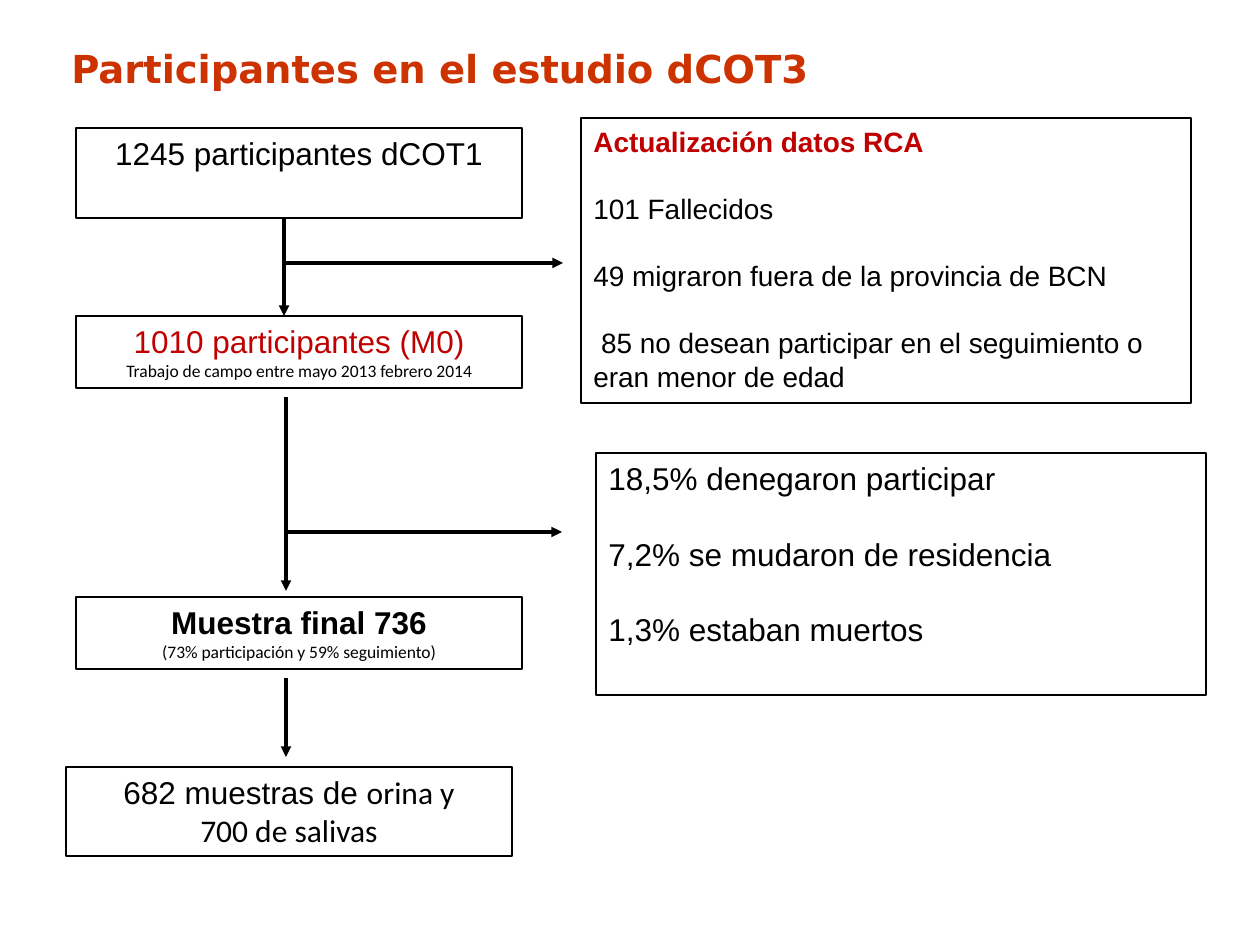
"""Build the participant flow slide of the dCOT3 study."""
from dataclasses import dataclass

from lxml.etree import SubElement
from pptx import Presentation
from pptx.dml.color import RGBColor
from pptx.enum.shapes import MSO_CONNECTOR as Connector, MSO_SHAPE as Shape
from pptx.enum.text import MSO_ANCHOR as Anchor, PP_ALIGN as Align
from pptx.oxml.ns import qn
from pptx.util import Emu, Pt


@dataclass(frozen=True)
class Style:
    font: str
    size: int
    color: str = "000000"
    bold: bool = False


@dataclass(frozen=True)
class Theme:
    title = Style("DejaVu Sans", 22, "CC3300", True)
    step = Style("Arial", 18)
    key_step = Style("Arial", 18, "C00000")
    final_step = Style("Arial", 18, bold=True)
    sample = Style("Calibri", 18)
    detail = Style("Calibri", 10)
    loss_title = Style("Arial", 16, "C00000", True)
    loss = Style("Arial", 16)
    ink = "000000"
    border = 0.75
    arrow = 2
    leading = 1.2


THEME = Theme()
PX = 914400 / 126
SLIDE = (1260, 945)

TITLE_AREA = (59, 39, 763, 59)
TITLE = [[("Participantes en el estudio dCOT3", THEME.title)]]

STEP_WIDTH = 446
STEPS = [
    (76, 128, 90, [[("1245 participantes dCOT1", THEME.step)]]),
    (76, 316, 72, [
        [("1010 participantes (M0)", THEME.key_step)],
        [("Trabajo de campo entre mayo 2013 febrero 2014", THEME.detail)],
    ]),
    (76, 597, 72, [
        [("Muestra final 736", THEME.final_step)],
        [("(73% participación y 59% seguimiento)", THEME.detail)],
    ]),
    (66, 767, 89, [
        [("682 muestras de ", THEME.step), ("orina y", THEME.sample)],
        [("700 de salivas", THEME.sample)],
    ]),
]

LOSS_WIDTH = 610
LOSSES = [
    (581, 118, 285, [
        [("Actualización datos RCA", THEME.loss_title)],
        [("101 Fallecidos", THEME.loss)],
        [("49 migraron fuera de la provincia de BCN", THEME.loss)],
        [(" 85 no desean participar en el seguimiento o eran menor de edad",
          THEME.loss)],
    ]),
    (596, 453, 242, [
        [("18,5% denegaron participar", THEME.step)],
        [("7,2% se mudaron de residencia", THEME.step)],
        [("1,3% estaban muertos", THEME.step)],
    ]),
]

ARROWS = [
    ((284, 217), (284, 316)),
    ((284, 532), (562, 532)),
    ((286, 263), (563, 263)),
    ((286, 397), (286, 591)),
    ((286, 678), (286, 757)),
]


def px(*lengths):
    return [Emu(round(length * PX)) for length in lengths]


def write(frame, paragraphs, align=Align.LEFT, spaced=False):
    frame.vertical_anchor = Anchor.TOP
    for index, spans in enumerate(paragraphs):
        para = frame.add_paragraph() if index else frame.paragraphs[0]
        para.alignment = align
        line_height = Pt(spans[0][1].size * THEME.leading)
        para.line_spacing = line_height
        if spaced and index:
            para.space_before = line_height
        for text, style in spans:
            span = para.add_run()
            span.text = text
            span.font.name = style.font
            span.font.size = Pt(style.size)
            span.font.bold = style.bold
            span.font.color.rgb = RGBColor.from_string(style.color)


def add_title(page):
    box = page.shapes.add_textbox(*px(*TITLE_AREA))
    box.text_frame.word_wrap = False
    write(box.text_frame, TITLE)


def add_box(page, area, paragraphs, align, spaced):
    box = page.shapes.add_shape(Shape.RECTANGLE, *px(*area))
    box.shadow.inherit = False
    box.fill.background()
    box.line.color.rgb = RGBColor.from_string(THEME.ink)
    box.line.width = Pt(THEME.border)
    box.text_frame.word_wrap = True
    write(box.text_frame, paragraphs, align, spaced)


def add_arrow(page, start, end):
    arrow = page.shapes.add_connector(Connector.STRAIGHT, *px(*start, *end))
    arrow.line.color.rgb = RGBColor.from_string(THEME.ink)
    arrow.line.width = Pt(THEME.arrow)
    SubElement(arrow.line._get_or_add_ln(), qn("a:tailEnd"), type="triangle")
    SubElement(arrow._element.spPr, qn("a:effectLst"))


def main():
    deck = Presentation()
    deck.slide_width, deck.slide_height = px(*SLIDE)
    page = deck.slides.add_slide(deck.slide_layouts[6])
    add_title(page)
    for left, top, height, paragraphs in STEPS:
        add_box(page, (left, top, STEP_WIDTH, height), paragraphs,
                Align.CENTER, False)
    for left, top, height, paragraphs in LOSSES:
        add_box(page, (left, top, LOSS_WIDTH, height), paragraphs,
                Align.LEFT, True)
    for start, end in ARROWS:
        add_arrow(page, start, end)
    deck.save("out.pptx")


if __name__ == "__main__":
    main()
